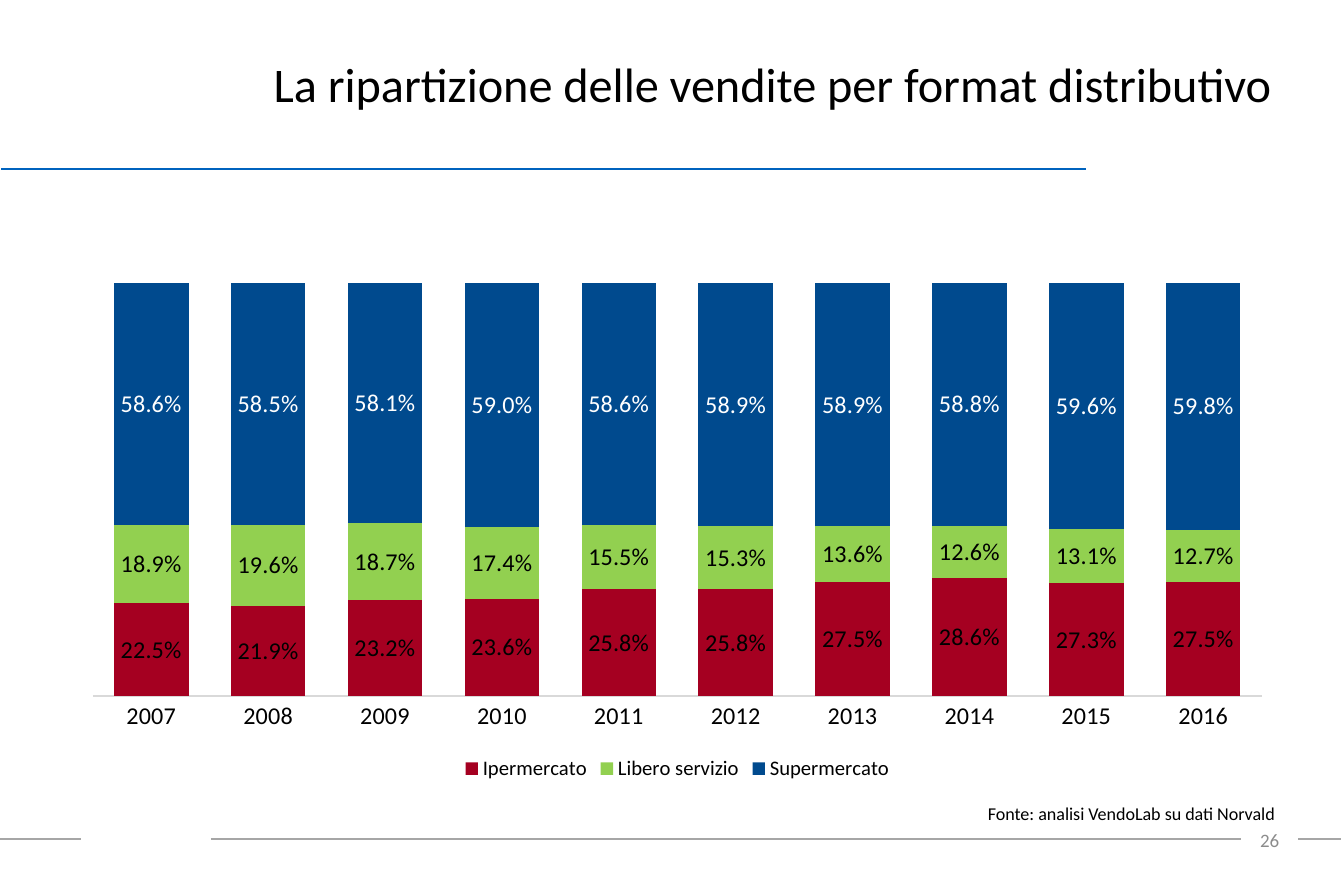
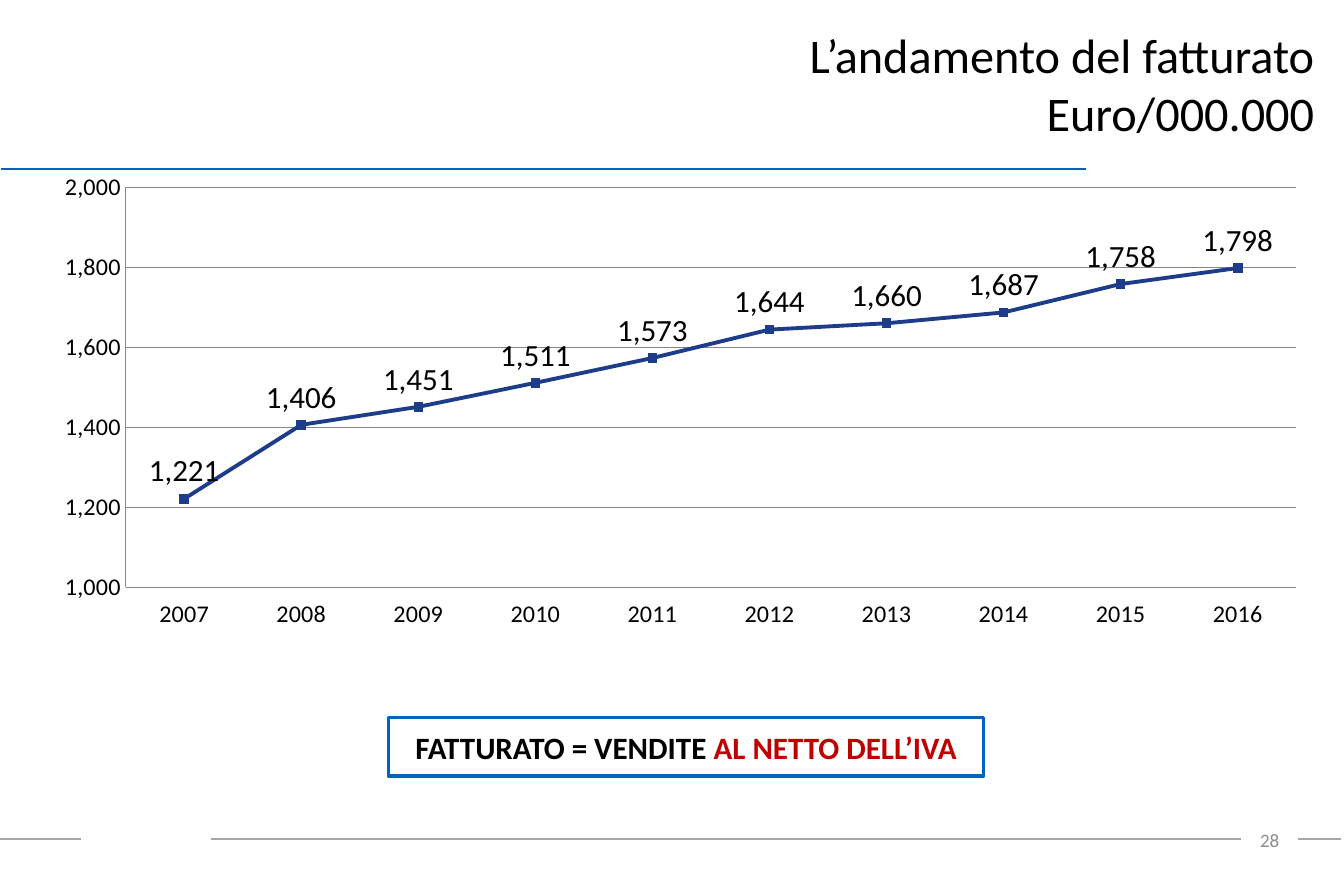
from dataclasses import dataclass

from lxml import etree
from pptx import Presentation
from pptx.chart.data import CategoryChartData
from pptx.dml.color import RGBColor
from pptx.enum.chart import (XL_CHART_TYPE, XL_LABEL_POSITION, XL_LEGEND_POSITION,
                             XL_MARKER_STYLE, XL_TICK_LABEL_POSITION, XL_TICK_MARK)
from pptx.enum.shapes import MSO_CONNECTOR, MSO_SHAPE
from pptx.enum.text import MSO_ANCHOR, MSO_AUTO_SIZE, PP_ALIGN
from pptx.oxml.ns import qn
from pptx.util import Inches, Pt

STACKED, LINE = XL_CHART_TYPE.COLUMN_STACKED, XL_CHART_TYPE.LINE_MARKERS
NO_TICK, LOW = XL_TICK_MARK.NONE, XL_TICK_LABEL_POSITION.LOW
ABOVE, BOTTOM = XL_LABEL_POSITION.ABOVE, XL_LEGEND_POSITION.BOTTOM
SQUARE = XL_MARKER_STYLE.SQUARE
STRAIGHT, RECTANGLE = MSO_CONNECTOR.STRAIGHT, MSO_SHAPE.RECTANGLE
LEFT, CENTER, RIGHT = PP_ALIGN.LEFT, PP_ALIGN.CENTER, PP_ALIGN.RIGHT
MIDDLE, NO_FIT = MSO_ANCHOR.MIDDLE, MSO_AUTO_SIZE.NONE
TITLE_ONLY = 5


@dataclass(frozen=True)
class Theme:
    font: str = "Calibri"
    black: str = "000000"
    white: str = "FFFFFF"
    blue: str = "0063BE"
    navy: str = "004A8E"
    indigo: str = "1D3D8B"
    crimson: str = "A50021"
    green: str = "92D050"
    red: str = "C00000"
    rule: str = "A6A6A6"
    number: str = "8C8C8C"
    axis: str = "D9D9D9"
    grid: str = "868686"
    title_size: float = 28
    large: float = 18
    medium: float = 14
    legend_size: float = 12
    number_size: float = 11
    source_size: float = 10.5


THEME = Theme()
YEARS = [str(year) for year in range(2007, 2017)]
FORMATS = [
    ("Ipermercato", THEME.crimson, THEME.black,
     [0.225, 0.219, 0.232, 0.236, 0.258, 0.258, 0.275, 0.286, 0.273, 0.275]),
    ("Libero servizio", THEME.green, THEME.black,
     [0.189, 0.196, 0.187, 0.174, 0.155, 0.153, 0.136, 0.126, 0.131, 0.127]),
    ("Supermercato", THEME.navy, THEME.white,
     [0.586, 0.585, 0.581, 0.59, 0.586, 0.589, 0.589, 0.588, 0.596, 0.598]),
]
REVENUE = [1221, 1406, 1451, 1511, 1573, 1644, 1660, 1687, 1758, 1798]

# Rules shared by all slides: start, end, height (percent of the slide), colour, points
RULES = [
    (0.1, 80.8, 19.1, THEME.blue, 1.5),
    (0, 6, 94.8, THEME.rule, 1),
    (15.7, 92.3, 94.8, THEME.rule, 1),
    (96.6, 99.8, 94.8, THEME.rule, 1),
]


def rgb(color):
    return RGBColor.from_string(color)


class Deck:
    """Holds the theme and the current slide; lengths are percents of the slide."""

    def __init__(self, theme):
        self.theme = theme
        self.prs = Presentation()
        self.prs.slide_width, self.prs.slide_height = Inches(10.83), Inches(7.13)
        self.s = None

    def x(self, share):
        return round(self.prs.slide_width * share / 100)

    def y(self, share):
        return round(self.prs.slide_height * share / 100)

    def frame(self, left, top, width, height):
        return self.x(left), self.y(top), self.x(width), self.y(height)

    def style(self, font, size, color, bold=False):
        font.name, font.size, font.bold = self.theme.font, Pt(size), bold
        font.color.rgb = rgb(color)

    def slide(self, title, number, title_width):
        self.s = self.prs.slides.add_slide(self.prs.slide_layouts[TITLE_ONLY])
        for rule in RULES:
            self.rule(*rule)
        sp = self.s.shapes.title
        sp.left, sp.top, sp.width, sp.height = self.frame(0.5, 0, title_width, 18.8)
        self.set_text(sp, title, self.theme.title_size, [self.theme.black] * 2, RIGHT)
        self.text(str(number), (91.8, 92.8, 4.3, 4.2), self.theme.number_size,
                  self.theme.number, RIGHT)

    def rule(self, start, end, height, color, width):
        line = self.s.shapes.add_connector(STRAIGHT, self.x(start), self.y(height),
                                           self.x(end), self.y(height))
        line.line.color.rgb, line.line.width = rgb(color), Pt(width)
        etree.SubElement(line.element.spPr, qn("a:effectLst"))

    def set_text(self, sp, text, size, colors, align, bold=False, tail=""):
        """Fill a shape with text and an optional tail run, one colour per run."""
        tf = sp.text_frame
        tf.word_wrap, tf.auto_size, tf.vertical_anchor = True, NO_FIT, MIDDLE
        p = tf.paragraphs[0]
        p.text, p.alignment = text, align
        if tail:
            p.add_run().text = tail
        for r, color in zip(p.runs, colors):
            self.style(r.font, size, color, bold)

    def text(self, text, frame, size, color, align=LEFT):
        sp = self.s.shapes.add_textbox(*self.frame(*frame))
        self.set_text(sp, text, size, [color], align)

    def outlined_box(self, text, tail, frame):
        sp = self.s.shapes.add_shape(RECTANGLE, *self.frame(*frame))
        sp.shadow.inherit = False
        sp.fill.background()
        sp.line.color.rgb, sp.line.width = rgb(self.theme.blue), Pt(2)
        self.set_text(sp, text, self.theme.large, [self.theme.black, self.theme.red],
                      CENTER, bold=True, tail=tail)

    def chart(self, kind, series, frame, plot):
        """Add a chart by year; plot gives the inner plot area as shares of the chart."""
        data = CategoryChartData()
        data.categories = YEARS
        for name, values in series:
            data.add_series(name, values)
        chart = self.s.shapes.add_chart(kind, *self.frame(*frame), data).chart
        chart.has_title = chart.has_legend = False
        self.style(chart.font, self.theme.medium, self.theme.black)
        chart.plots[0].vary_by_categories = False
        for axis in (chart.category_axis, chart.value_axis):
            axis.major_tick_mark = axis.minor_tick_mark = NO_TICK
            self.style(axis.tick_labels.font, self.theme.medium, self.theme.black)
        self.place_plot(chart, plot)
        return chart

    @staticmethod
    def place_plot(chart, plot):
        area = chart.element.find(f".//{qn('c:plotArea')}")
        for old in area.findall(qn("c:layout")):
            area.remove(old)
        layout = etree.Element(qn("c:layout"))
        area.insert(0, layout)
        manual = etree.SubElement(layout, qn("c:manualLayout"))
        settings = [("layoutTarget", "inner"), ("xMode", "edge"), ("yMode", "edge")]
        for tag, value in settings + list(zip("xywh", plot)):
            etree.SubElement(manual, qn(f"c:{tag}")).set("val", str(value))

    def labels(self, series, number_format, size, color):
        labels = series.data_labels
        labels.show_value = True
        labels.number_format, labels.number_format_is_linked = number_format, False
        self.style(labels.font, size, color)
        return labels

    def stacked_columns(self, formats, frame, plot):
        series = [(name, values) for name, _, _, values in formats]
        chart = self.chart(STACKED, series, frame, plot)
        chart.plots[0].gap_width, chart.plots[0].overlap = 57, 100
        for column, (_, fill, label, _) in zip(chart.plots[0].series, formats):
            column.format.fill.solid()
            column.format.fill.fore_color.rgb = rgb(fill)
            self.labels(column, "0.0%", self.theme.medium, label)
        line = chart.category_axis.format.line
        line.color.rgb, line.width = rgb(self.theme.axis), Pt(0.75)
        axis = chart.value_axis
        axis.visible = axis.has_major_gridlines = False
        axis.minimum_scale, axis.maximum_scale = 0, 1.2
        chart.has_legend = True
        chart.legend.position, chart.legend.include_in_layout = BOTTOM, False
        self.style(chart.legend.font, self.theme.legend_size, self.theme.black)

    def trend(self, name, values, frame, plot):
        chart = self.chart(LINE, [(name, values)], frame, plot)
        color = rgb(self.theme.indigo)
        series = chart.plots[0].series[0]
        series.smooth = False
        series.format.line.color.rgb, series.format.line.width = color, Pt(2.25)
        marker = series.marker
        marker.style, marker.size = SQUARE, 5
        marker.format.fill.solid()
        marker.format.fill.fore_color.rgb = marker.format.line.color.rgb = color
        self.labels(series, "#,##0", self.theme.large, self.theme.black).position = ABOVE
        chart.category_axis.tick_label_position = LOW
        axis = chart.value_axis
        axis.minimum_scale, axis.maximum_scale, axis.major_unit = 1000, 2000, 200
        axis.tick_labels.number_format = "#,##0"
        axis.tick_labels.number_format_is_linked = False
        axis.has_major_gridlines = True
        for item in (chart.category_axis, axis, axis.major_gridlines):
            item.format.line.color.rgb = rgb(self.theme.grid)
            item.format.line.width = Pt(0.75)


def main():
    deck = Deck(THEME)

    deck.slide("La ripartizione delle vendite per format distributivo", 26, 95)
    deck.stacked_columns(FORMATS, (5.1, 21.3, 90.6, 67.5), (0.02, 0.02, 0.96, 0.83))
    deck.text("Fonte: analisi VendoLab su dati Norvald", (72.6, 90, 24, 3.9),
              THEME.source_size, THEME.black)

    deck.slide("L’andamento del fatturato\vEuro/000.000", 28, 98.2)
    deck.trend("Fatturato", REVENUE, (2.8, 19.5, 93.7, 59.2), (0.07, 0.02, 0.93, 0.77))
    deck.outlined_box("FATTURATO = VENDITE ", "AL NETTO DELL’IVA",
                      (28.9, 81.1, 44.3, 6.6))

    deck.prs.save("out.pptx")


if __name__ == "__main__":
    main()
